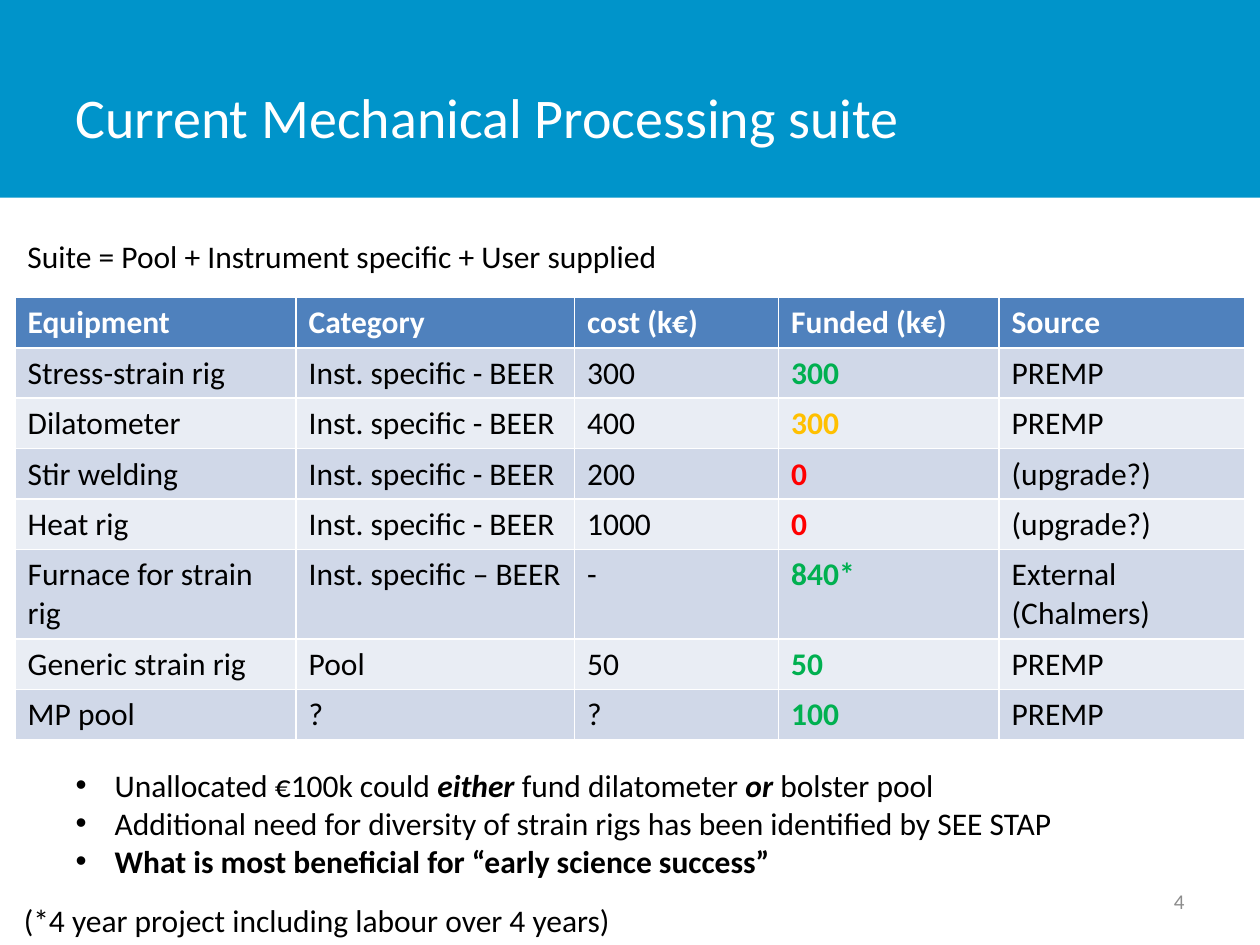
from dataclasses import dataclass

from lxml.etree import SubElement
from pptx import Presentation
from pptx.dml.color import RGBColor as Rgb
from pptx.enum.shapes import MSO_SHAPE as Shape
from pptx.enum.text import MSO_ANCHOR as Anchor, MSO_AUTO_SIZE as AutoSize, PP_ALIGN as Align
from pptx.oxml.ns import qn
from pptx.util import Emu, Pt


@dataclass(frozen=True)
class Theme:
    """Colours, typeface and type sizes of the slide."""
    face: str = "Calibri"
    title_size: int = 32
    text_size: int = 18
    number_size: int = 12
    band: str = "0094CA"
    white: str = "FFFFFF"
    ink: str = "000000"
    muted: str = "8C8C8C"
    header: str = "4F81BD"
    stripes: tuple = ("D0D8E8", "E9EDF4")
    full: str = "00B050"
    partial: str = "FFC000"
    unfunded: str = "FF0000"


THEME = Theme()
PX_PER_INCH = 100
SCALE = 914400 // PX_PER_INCH

HEADINGS = ("Equipment", "Category", "cost (k€)", "Funded (k€)", "Source")
EQUIPMENT = (
    ("Stress-strain rig", "Inst. specific - BEER", "300", "300", "PREMP", THEME.full),
    ("Dilatometer", "Inst. specific - BEER", "400", "300", "PREMP", THEME.partial),
    ("Stir welding", "Inst. specific - BEER", "200", "0", "(upgrade?)", THEME.unfunded),
    ("Heat rig", "Inst. specific - BEER", "1000", "0", "(upgrade?)", THEME.unfunded),
    ("Furnace for strain rig", "Inst. specific – BEER", "-", "840*", "External (Chalmers)", THEME.full),
    ("Generic strain rig", "Pool", "50", "50", "PREMP", THEME.full),
    ("MP pool", "?", "?", "100", "PREMP", THEME.full),
)
COLUMN_WIDTHS = (223, 221, 162, 175, 195)
FUNDED_COLUMN = HEADINGS.index("Funded (k€)")
ROW_HEIGHT, FURNACE_ROW, FURNACE_HEIGHT = 40, 5, 71

POINTS = (
    (("Unallocated €100k could ", ""), ("either", "bi"), (" fund dilatometer ", ""),
     ("or ", "bi"), ("bolster pool", "")),
    (("Additional need for diversity of strain rigs has been identified by SEE STAP", ""),),
    (("What is most beneficial for “early science success”", "b"),),
)


def px(length):
    """Turn px into EMU."""
    return Emu(length * SCALE)


def place(part, box):
    """Move a part to a box of left, top, width and height."""
    part.left, part.top, part.width, part.height = map(px, box)


def style(paragraph, size, color, bold=None):
    """Set the font of a whole paragraph."""
    font = paragraph.font
    font.name, font.size, font.bold = THEME.face, Pt(size), bold
    font.color.rgb = Rgb.from_string(color)


def fill(target, color):
    """Give a shape or cell a solid fill."""
    target.fill.solid()
    target.fill.fore_color.rgb = Rgb.from_string(color)


def add_header(slide, box):
    """Draw the title band behind the title placeholder."""
    left, top, width, height = box
    band = slide.shapes.add_shape(Shape.RECTANGLE, *map(px, box))
    band.shadow.inherit = False
    fill(band, THEME.band)
    band.line.fill.background()
    slide.shapes._spTree.insert(2, band._element)

    title = slide.shapes.title
    place(title, (left + 50, top + 30, width - 219, height - 32))
    title.text_frame.text = "Current Mechanical Processing suite"
    title.text_frame.vertical_anchor = Anchor.MIDDLE
    heading = title.text_frame.paragraphs[0]
    heading.alignment = Align.LEFT
    style(heading, THEME.title_size, THEME.white)


def add_line(slide, box, text):
    """Add one unwrapped line of text."""
    frame = slide.shapes.add_textbox(*map(px, box)).text_frame
    frame.word_wrap = False
    frame.auto_size = AutoSize.SHAPE_TO_FIT_TEXT
    frame.text = text
    style(frame.paragraphs[0], THEME.text_size, THEME.ink)


def add_equipment(slide, box):
    """Add the equipment table with striped rows and coloured funding."""
    rows = (HEADINGS, *(row[:-1] for row in EQUIPMENT))
    table = slide.shapes.add_table(len(rows), len(HEADINGS), *map(px, box)).table
    for column, width in zip(table.columns, COLUMN_WIDTHS):
        column.width = px(width)
    for r, texts in enumerate(rows):
        table.rows[r].height = px(FURNACE_HEIGHT if r == FURNACE_ROW else ROW_HEIGHT)
        for c, text in enumerate(texts):
            cell = table.cell(r, c)
            cell.text = text
            funded = r > 0 and c == FUNDED_COLUMN
            if r == 0:
                color = THEME.white
            else:
                color = EQUIPMENT[r - 1][-1] if funded else THEME.ink
            fill(cell, THEME.stripes[(r - 1) % 2] if r else THEME.header)
            style(cell.text_frame.paragraphs[0], THEME.text_size, color, r == 0 or funded)


def add_points(slide, box):
    """Fill the body placeholder with the bulleted points."""
    body = slide.placeholders[1]
    place(body, box)
    frame = body.text_frame
    frame.auto_size = AutoSize.NONE
    for index, point in enumerate(POINTS):
        paragraph = frame.paragraphs[0] if index == 0 else frame.add_paragraph()
        paragraph.space_before = Pt(0)
        properties = paragraph._p.get_or_add_pPr()
        properties.set("marL", str(px(31)))
        properties.set("indent", str(-px(31)))
        SubElement(properties, qn("a:buFont"), typeface="Arial")
        SubElement(properties, qn("a:buChar"), char="•")
        style(paragraph, THEME.text_size, THEME.ink)
        for text, emphasis in point:
            run = paragraph.add_run()
            run.text = text
            if emphasis:
                run.font.bold = "b" in emphasis
                run.font.italic = "i" in emphasis


def add_slide_number(slide, box):
    """Add the slide number field."""
    frame = slide.shapes.add_textbox(*map(px, box)).text_frame
    frame.word_wrap = True
    frame.vertical_anchor = Anchor.MIDDLE
    number = frame.paragraphs[0]
    number.alignment = Align.RIGHT
    style(number, THEME.number_size, THEME.muted)
    run = number.add_run()
    run.text = "4"
    

def main():
    """Build the slide and save it."""
    deck = Presentation()
    deck.slide_width, deck.slide_height = px(1000), px(750)
    slide = deck.slides.add_slide(deck.slide_layouts[1])
    add_header(slide, (0, 0, 1000, 157))
    add_slide_number(slide, (717, 695, 233, 40))
    add_equipment(slide, (12, 236, 976, 354))
    add_line(slide, (9, 710, 499, 40), "(*4 year project including labour over 4 years)")
    add_points(slide, (50, 603, 900, 101))
    add_line(slide, (12, 183, 526, 40), "Suite = Pool + Instrument specific + User supplied")
    deck.save("out.pptx")


if __name__ == "__main__":
    main()
